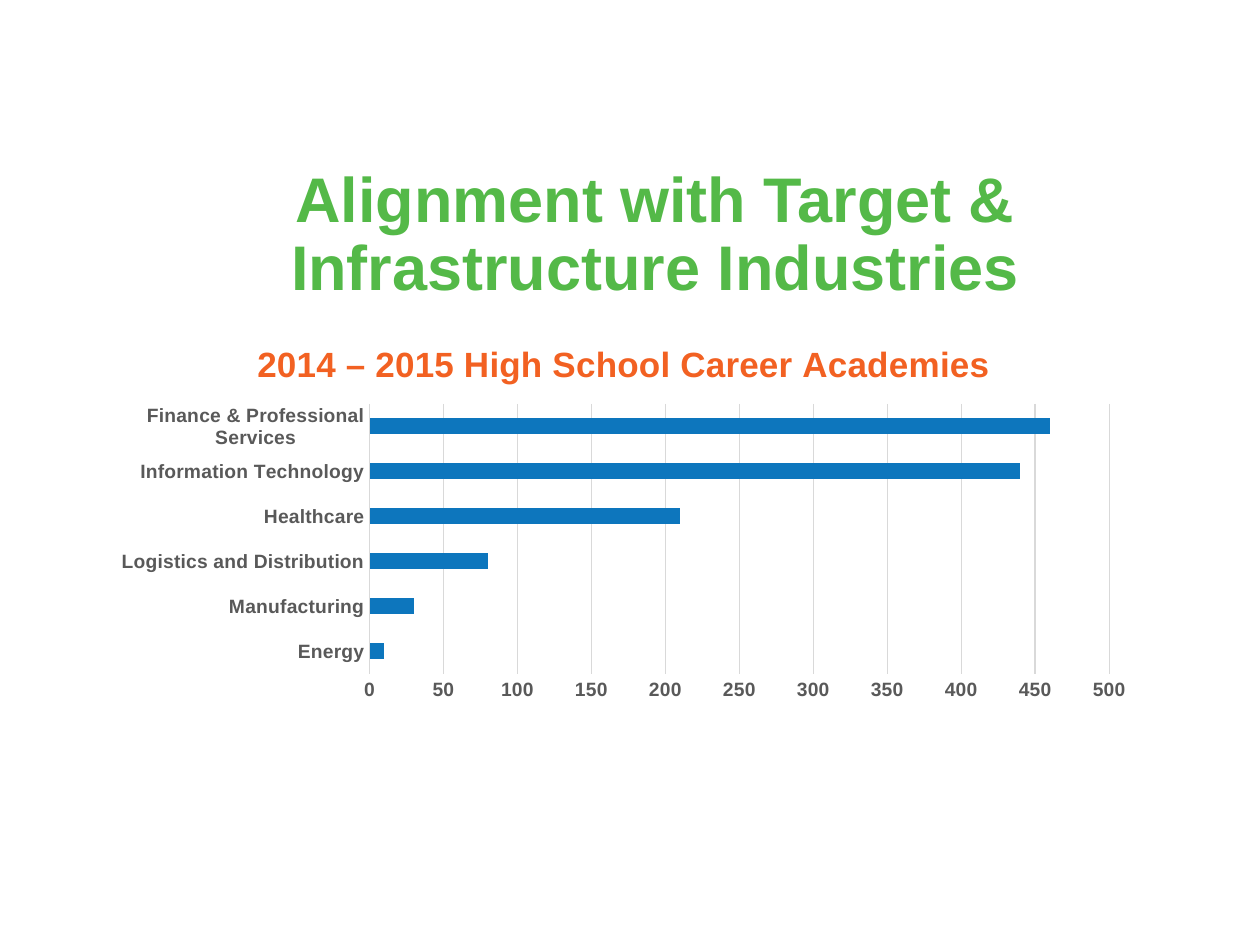
from dataclasses import dataclass

from pptx import Presentation
from pptx.chart.axis import CategoryAxis, ValueAxis
from pptx.chart.data import CategoryChartData
from pptx.dml.color import RGBColor
from pptx.enum.chart import XL_CHART_TYPE, XL_TICK_MARK
from pptx.enum.text import MSO_ANCHOR, MSO_AUTO_SIZE, PP_ALIGN
from pptx.slide import Slide
from pptx.text.text import Font, TextFrame
from pptx.util import Inches, Pt


@dataclass(frozen=True)
class Theme:
    font: str = "Arial"
    heading: str = "54B948"
    chart_heading: str = "F26122"
    bar: str = "0D76BD"
    label: str = "595959"
    grid: str = "D9D9D9"
    heading_size: int = 36
    chart_heading_size: int = 20
    label_size: int = 11
    line_width: float = 0.75


@dataclass(frozen=True)
class Area:
    left: float
    top: float
    width: float
    height: float

    def lengths(self) -> tuple[int, int, int, int]:
        across, down = Inches(10), Inches(7.5)
        return (int(self.left * across), int(self.top * down),
                int(self.width * across), int(self.height * down))


@dataclass(frozen=True)
class Industry:
    name: str
    academies: int


THEME = Theme()
TITLE_AREA = Area(0.08, 0.18, 0.88, 0.14)
CHART_AREA = Area(0.08, 0.34, 0.83, 0.41)
INDUSTRIES = [
    Industry("Energy", 10),
    Industry("Manufacturing", 30),
    Industry("Logistics and Distribution", 80),
    Industry("Healthcare", 210),
    Industry("Information Technology", 440),
    Industry("Finance & Professional Services", 460),
]


def style_font(font: Font, size: float, color: str) -> None:
    font.name, font.size, font.bold = THEME.font, Pt(size), True
    font.color.rgb = RGBColor.from_string(color)


def write_text(frame: TextFrame, text: str, *, size: float, color: str,
               line_spacing: float = 1.0) -> None:
    para = frame.paragraphs[0]
    para.alignment = PP_ALIGN.CENTER
    para.line_spacing = line_spacing
    span = para.add_run()
    span.text = text
    style_font(span.font, size, color)


def style_axis(axis: CategoryAxis | ValueAxis) -> None:
    axis.major_tick_mark = axis.minor_tick_mark = XL_TICK_MARK.NONE
    style_font(axis.tick_labels.font, THEME.label_size, THEME.label)


def add_title(page: Slide) -> None:
    box = page.shapes.title
    box.left, box.top, box.width, box.height = TITLE_AREA.lengths()
    frame = box.text_frame
    frame.word_wrap = True
    frame.auto_size = MSO_AUTO_SIZE.NONE
    frame.vertical_anchor = MSO_ANCHOR.MIDDLE
    write_text(frame, "Alignment with Target & Infrastructure Industries",
               size=THEME.heading_size, color=THEME.heading, line_spacing=0.9)


def add_academy_chart(page: Slide) -> None:
    data = CategoryChartData()
    data.categories = [industry.name for industry in INDUSTRIES]
    data.add_series("Series 1", [industry.academies for industry in INDUSTRIES])
    chart = page.shapes.add_chart(
        XL_CHART_TYPE.BAR_CLUSTERED, *CHART_AREA.lengths(), data).chart
    chart.font.name, chart.font.size = THEME.font, Pt(10)
    chart.has_legend = False
    chart.has_title = True
    chart.chart_title.include_in_layout = False
    write_text(chart.chart_title.text_frame,
               "2014 – 2015 High School Career Academies",
               size=THEME.chart_heading_size, color=THEME.chart_heading)

    plot = chart.plots[0]
    plot.gap_width = 182
    plot.vary_by_categories = False
    fill = plot.series[0].format.fill
    fill.solid()
    fill.fore_color.rgb = RGBColor.from_string(THEME.bar)

    categories, values = chart.category_axis, chart.value_axis
    style_axis(categories)
    style_axis(values)
    values.minimum_scale, values.maximum_scale, values.major_unit = 0, 500, 50
    values.has_major_gridlines = True
    values.format.line.fill.background()
    for line in (categories.format.line, values.major_gridlines.format.line):
        line.color.rgb = RGBColor.from_string(THEME.grid)
        line.width = Pt(THEME.line_width)


def main() -> None:
    """Build the slide on career academies by industry."""
    deck = Presentation()
    deck.slide_width, deck.slide_height = Inches(10), Inches(7.5)
    page = deck.slides.add_slide(deck.slide_layouts.get_by_name("Title Only"))
    add_title(page)
    add_academy_chart(page)
    deck.save("out.pptx")


if __name__ == "__main__":
    main()
